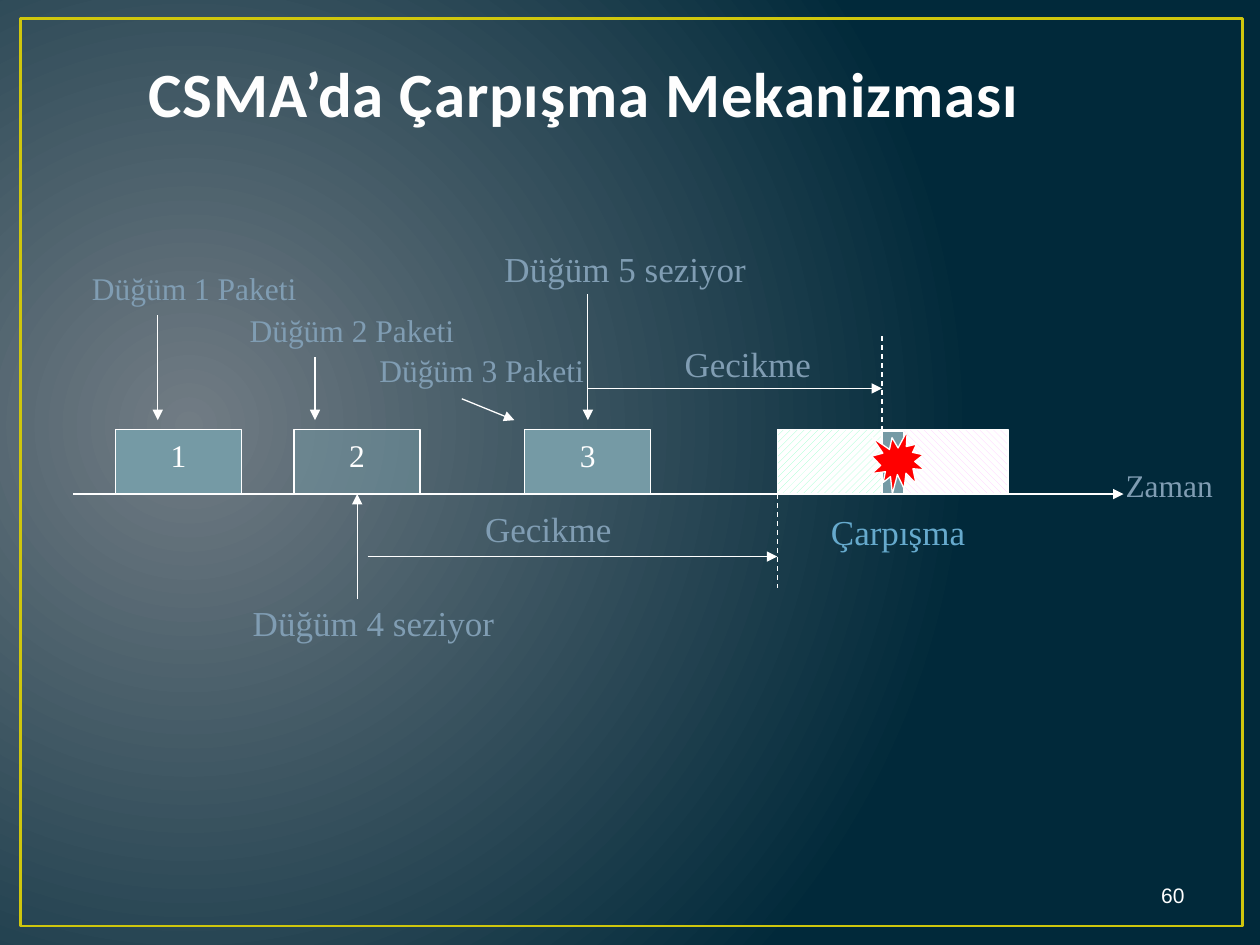
from lxml import etree
from pptx import Presentation
from pptx.dml.color import RGBColor
from pptx.enum.dml import MSO_LINE, MSO_PATTERN
from pptx.enum.shapes import MSO_CONNECTOR, MSO_SHAPE
from pptx.enum.text import MSO_ANCHOR, PP_ALIGN
from pptx.oxml.ns import qn
from pptx.util import Cm, Pt

RECTANGLE, BURST = MSO_SHAPE.RECTANGLE, MSO_SHAPE.EXPLOSION1
STRAIGHT, DASH = MSO_CONNECTOR.STRAIGHT, MSO_LINE.DASH
UPWARD = MSO_PATTERN.WIDE_UPWARD_DIAGONAL
DOWNWARD = MSO_PATTERN.WIDE_DOWNWARD_DIAGONAL
LEFT, CENTER, RIGHT = PP_ALIGN.LEFT, PP_ALIGN.CENTER, PP_ALIGN.RIGHT
TOP, MIDDLE, BOTTOM = MSO_ANCHOR.TOP, MSO_ANCHOR.MIDDLE, MSO_ANCHOR.BOTTOM

SERIF = "Times New Roman"
WHITE, TEAL, RED, YELLOW = "FFFFFF", "759AA5", "FF0000", "CFC60D"
GREY_BLUE, SKY_BLUE = "809DB3", "66AACD"

# Shared positions on the time line, in centimetres
AXIS_Y = 9.96
PACKET_WIDTH, PACKET_HEIGHT = 2.54, 1.3
PACKET_TOP = AXIS_Y - PACKET_HEIGHT
ARROW_END_Y = 8.47
NODE_4_START, NODE_5_START = 15.67, 17.78
NODE_4_SENSES, NODE_5_SENSES = 7.2, 11.85


def color(value):
    return RGBColor.from_string(value)


def add_child(parent, tag, **attributes):
    child = etree.SubElement(parent, qn(tag))
    for name, value in attributes.items():
        child.set(name, str(value))
    return child


def set_background(page, inner, outer):
    """Fill the page with a circular gradient centred left of the middle."""
    fill = page.background.fill
    fill.gradient()
    for stop, value, position in zip(fill.gradient_stops, (inner, outer), (0, 1)):
        stop.color.rgb = color(value)
        stop.position = position
    gradient = page.element.find(".//" + qn("a:gradFill"))
    gradient.remove(gradient.find(qn("a:lin")))
    circle = add_child(gradient, "a:path", path="circle")
    add_child(circle, "a:fillToRect", l=15000, t=50000, r=85000, b=60000)


def write(frame, text, size, font, value, align, anchor=TOP):
    frame.word_wrap = True
    frame.vertical_anchor = anchor
    para = frame.paragraphs[0]
    para.text = text
    para.alignment = align
    para.font.size = Pt(size)
    para.font.name = font
    para.font.color.rgb = color(value)
    return para


def add_title(page, text):
    title = page.shapes.title
    title.left, title.top = Cm(2.74), Cm(0.64)
    title.width, title.height = Cm(22.23), Cm(2.11)
    para = write(title.text_frame, text, 36, "Calibri", "FEFEFE", LEFT, BOTTOM)
    para.font.bold = True
    para.runs[0].font.bold = True
    para.runs[0]._r.get_or_add_rPr().set("spc", "50")


def add_label(page, text, left, top, width, height=1.1, size=20, font=SERIF,
              value=GREY_BLUE, align=CENTER, anchor=TOP):
    box = page.shapes.add_textbox(Cm(left), Cm(top), Cm(width), Cm(height))
    write(box.text_frame, text, size, font, value, align, anchor)


def add_outlined(page, kind, left, top, width, height, line=WHITE, weight=0.75):
    shape = page.shapes.add_shape(kind, Cm(left), Cm(top), Cm(width), Cm(height))
    shape.shadow.inherit = False
    shape.fill.background()
    shape.line.color.rgb = color(line)
    shape.line.width = Pt(weight)
    return shape


def fill_solid(shape, value, opacity=100):
    shape.fill.solid()
    shape.fill.fore_color.rgb = color(value)
    if opacity < 100:
        rgb = shape.element.spPr.find(qn("a:solidFill")).find(qn("a:srgbClr"))
        add_child(rgb, "a:alpha", val=opacity * 1000)


def add_packet(page, left):
    return add_outlined(page, RECTANGLE, left, PACKET_TOP, PACKET_WIDTH, PACKET_HEIGHT)


def add_numbered_packet(page, number, left, opacity):
    packet = add_packet(page, left)
    fill_solid(packet, TEAL, opacity)
    write(packet.text_frame, number, 18, SERIF, WHITE, CENTER)


def add_hatched_packet(page, left, pattern, value):
    fill = add_packet(page, left).fill
    fill.patterned()
    fill.pattern = pattern
    fill.fore_color.rgb = color(value)
    fill.back_color.rgb = color(WHITE)


def add_line(page, x1, y1, x2, y2):
    line = page.shapes.add_connector(STRAIGHT, Cm(x1), Cm(y1), Cm(x2), Cm(y2))
    line.line.color.rgb = color(WHITE)
    line.line.width = Pt(0.75)
    add_child(line.element.spPr, "a:effectLst")
    return line


def add_arrow(page, x1, y1, x2, y2):
    arrow = add_line(page, x1, y1, x2, y2)
    add_child(arrow.element.spPr.find(qn("a:ln")), "a:tailEnd", type="triangle")


def add_dashed_line(page, x, y1, y2):
    add_line(page, x, y1, x, y2).line.dash_style = DASH


def add_collision(page):
    add_hatched_packet(page, NODE_4_START, UPWARD, "99FFCC")
    add_hatched_packet(page, NODE_5_START, DOWNWARD, "FFCCFF")
    overlap = add_outlined(page, RECTANGLE, NODE_5_START, 8.69, 0.43, 1.27)
    fill_solid(overlap, TEAL)
    fill_solid(add_outlined(page, BURST, 17.57, 8.69, 1.07, 1.27), RED)
    add_label(page, "Çarpışma", 15.88, 10.16, 4.45, value=SKY_BLUE)


def add_sensing(page):
    """Show when nodes 4 and 5 sense the line and how long each one waits."""
    add_arrow(page, NODE_4_SENSES, 12.07, NODE_4_SENSES, AXIS_Y)
    add_label(page, "Düğüm 4 seziyor", 4.7, 12.01, 5.66)
    add_arrow(page, 7.41, 11.22, NODE_4_START, 11.22)
    add_label(page, "Gecikme", 9.53, 10.11, 3.38, align=LEFT)
    add_dashed_line(page, NODE_4_START, AXIS_Y, 11.85)

    add_arrow(page, NODE_5_SENSES, 5.93, NODE_5_SENSES, ARROW_END_Y)
    add_label(page, "Düğüm 5 seziyor", 9.53, 4.87, 6.15)
    add_arrow(page, NODE_5_SENSES, 7.83, NODE_5_START, 7.83)
    add_label(page, "Gecikme", 13.55, 6.78, 3.15, align=LEFT)
    add_dashed_line(page, NODE_5_START, 8.69, 6.77)


def main():
    deck = Presentation()
    deck.slide_width, deck.slide_height = Cm(25.4), Cm(19.05)
    page = deck.slides.add_slide(deck.slide_layouts[5])
    set_background(page, "717C84", "01293A")
    add_outlined(page, RECTANGLE, 0.41, 0.38, 24.64, 18.29, YELLOW, 1.5)
    add_title(page, "CSMA’da Çarpışma Mekanizması")
    add_label(page, "60", 18.21, 17.53, 5.92, 1.02, 12, "Arial", WHITE, RIGHT, MIDDLE)

    add_arrow(page, 1.48, AXIS_Y, 22.65, AXIS_Y)
    add_label(page, "Zaman", 22.44, 9.27, 2.33, 1.02, 18, align=LEFT)
    for number, left, opacity in (("1", 2.33, 100), ("2", 5.93, 50), ("3", 10.58, 100)):
        add_numbered_packet(page, number, left, opacity)
    add_collision(page)
    add_sensing(page)

    packet_labels = (
        ("Düğüm 1 Paketi", 1.48, 5.29, 4.87, (3.18, 6.35, 3.18)),
        ("Düğüm 2 Paketi", 4.66, 6.14, 4.87, (6.35, 7.2, 6.35)),
        ("Düğüm 3 Paketi", 7.35, 6.95, 4.72, (9.31, 8.04, 10.37)),
    )
    for text, left, top, width, arrow in packet_labels:
        add_label(page, text, left, top, width, 1.02, 18)
        add_arrow(page, *arrow, ARROW_END_Y)
    deck.save("out.pptx")


if __name__ == "__main__":
    main()
